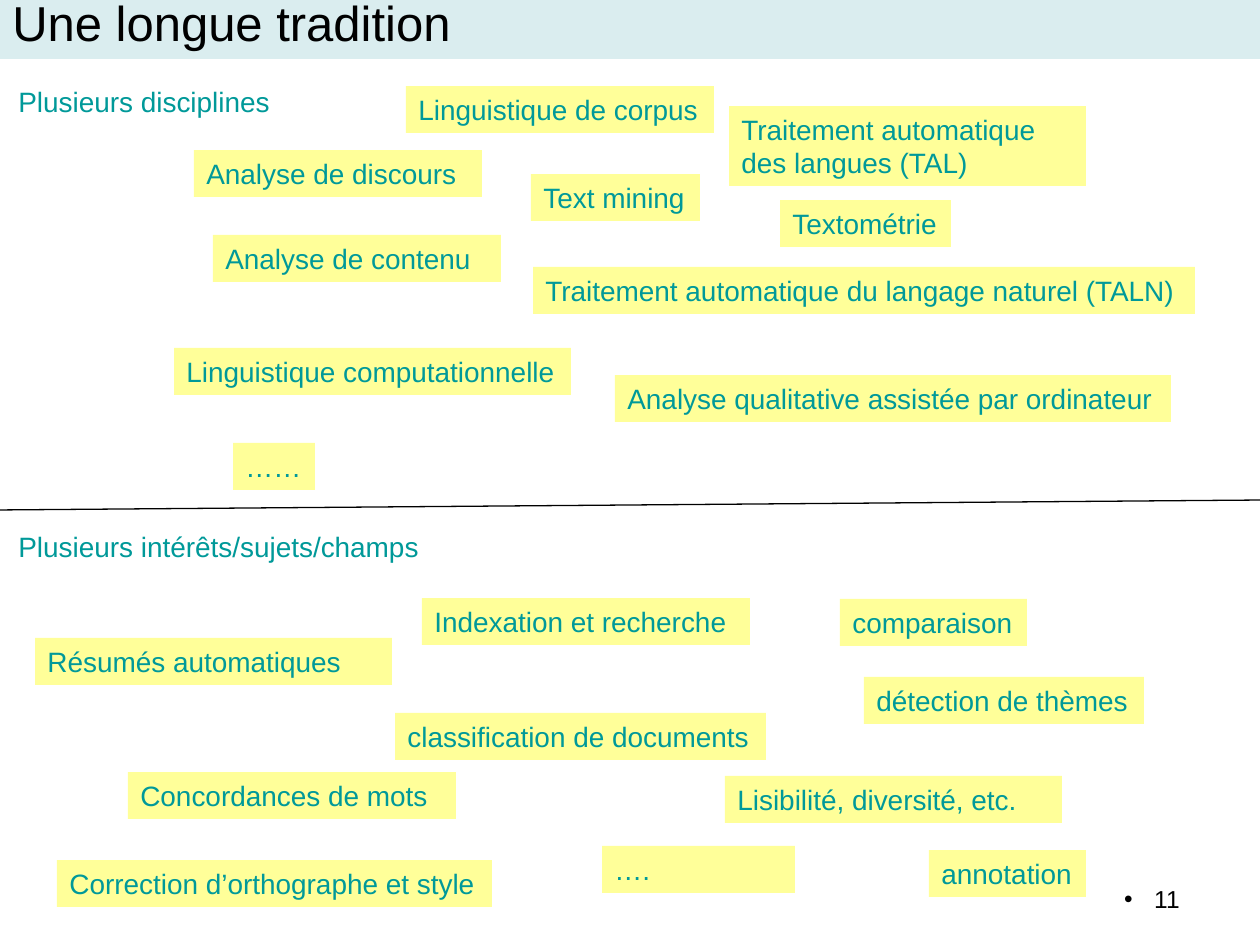
from lxml import etree
from pptx import Presentation
from pptx import util as u
from pptx.dml.color import RGBColor
from pptx.enum import shapes, text
from pptx.oxml.ns import qn

PX = 914400 / 126
COLORS = {"banner": "DAEDEF", "label": "FFFF99", "heading": "FFFFFF",
          "teal": "009999", "black": "000000"}
LABEL_HEIGHT = 47

# left, top, width, wording
HEADINGS = [
    (6, 78, 280, "Plusieurs disciplines"),
    (6, 523, 431, "Plusieurs intérêts/sujets/champs"),
]
DISCIPLINES = [
    (406, 86, 308, "Linguistique de corpus"),
    (531, 174, 169, "Text mining"),
    (780, 200, 171, "Textométrie"),
    (533, 267, 662, "Traitement automatique du langage naturel (TALN)"),
    (174, 348, 397, "Linguistique computationnelle"),
    (615, 375, 556, "Analyse qualitative assistée par ordinateur"),
    (233, 443, 82, "……"),
]
WRAPPED_DISCIPLINES = [
    (194, 150, 288, "Analyse de discours"),
    (213, 235, 288, "Analyse de contenu"),
]
TOPICS = [
    (840, 599, 187, "comparaison"),
    (864, 677, 280, "détection de thèmes"),
    (395, 713, 371, "classification de documents"),
    (57, 860, 435, "Correction d’orthographe et style"),
    (929, 850, 157, "annotation"),
]
WRAPPED_TOPICS = [
    (422, 598, 328, "Indexation et recherche"),
    (35, 638, 357, "Résumés automatiques"),
    (128, 772, 328, "Concordances de mots"),
    (725, 776, 337, "Lisibilité, diversité, etc."),
    (602, 846, 193, "…."),
]


def px(length):
    return u.Emu(round(length * PX))


def color(name):
    return RGBColor.from_string(COLORS[name])


def write(frame, wording, size=16, ink="teal", align=text.PP_ALIGN.LEFT,
          wrap=True, fit=True, anchor=text.MSO_ANCHOR.TOP):
    frame.word_wrap = wrap
    frame.vertical_anchor = anchor
    if fit:
        frame.auto_size = text.MSO_AUTO_SIZE.SHAPE_TO_FIT_TEXT
    paragraph = frame.paragraphs[0]
    paragraph.alignment = align
    run = paragraph.add_run()
    run.text = wording
    run.font.name = "Arial"
    run.font.size = u.Pt(size)
    run.font.color.rgb = color(ink)
    return paragraph


def add_box(slide, left, top, width, height, fill, outline=None):
    box = slide.shapes.add_shape(shapes.MSO_SHAPE.RECTANGLE,
                                 px(left), px(top), px(width), px(height))
    box.shadow.inherit = False
    box.fill.solid()
    box.fill.fore_color.rgb = color(fill)
    if outline:
        box.line.color.rgb = color(outline)
        box.line.width = u.Pt(1)
    else:
        box.line.fill.background()
    return box


def add_labels(slide, labels, fill="label", wrap=False, height=LABEL_HEIGHT):
    for left, top, width, wording in labels:
        box = add_box(slide, left, top, width, height, fill)
        write(box.text_frame, wording, wrap=wrap)


def add_divider(slide, x1, y1, x2, y2):
    divider = slide.shapes.add_connector(shapes.MSO_CONNECTOR.STRAIGHT,
                                         px(x1), px(y1), px(x2), px(y2))
    divider.line.color.rgb = color("black")
    divider.line.width = u.Pt(0.75)
    etree.SubElement(divider._element.spPr, qn("a:effectLst"))


def add_page_number(slide, number):
    box = slide.shapes.add_textbox(px(898), px(880), px(294), px(39))
    paragraph = write(box.text_frame, number, size=14, ink="black",
                      align=text.PP_ALIGN.RIGHT, fit=False)
    paragraph.line_spacing = 0.93
    properties = paragraph._p.get_or_add_pPr()
    properties.set("marL", str(px(30)))
    properties.set("indent", str(px(-30)))
    etree.SubElement(properties, qn("a:buFont"), typeface="Arial")
    etree.SubElement(properties, qn("a:buChar"), char="•")


def main():
    deck = Presentation()
    deck.slide_width, deck.slide_height = px(1260), px(945)
    slide = deck.slides.add_slide(deck.slide_layouts[6])

    banner = add_box(slide, 0, -14, 1260, 72, "banner", outline="banner")
    write(banner.text_frame, "Une longue tradition", size=28, ink="black")

    add_labels(slide, HEADINGS, fill="heading")
    add_labels(slide, DISCIPLINES + TOPICS)
    add_labels(slide, WRAPPED_DISCIPLINES + WRAPPED_TOPICS, wrap=True)
    add_labels(slide, [(729, 106, 357, "Traitement automatique des langues (TAL)")],
               wrap=True, height=80)
    add_divider(slide, 0, 510, 1265, 500)
    add_page_number(slide, "11")

    deck.save("out.pptx")


if __name__ == "__main__":
    main()
